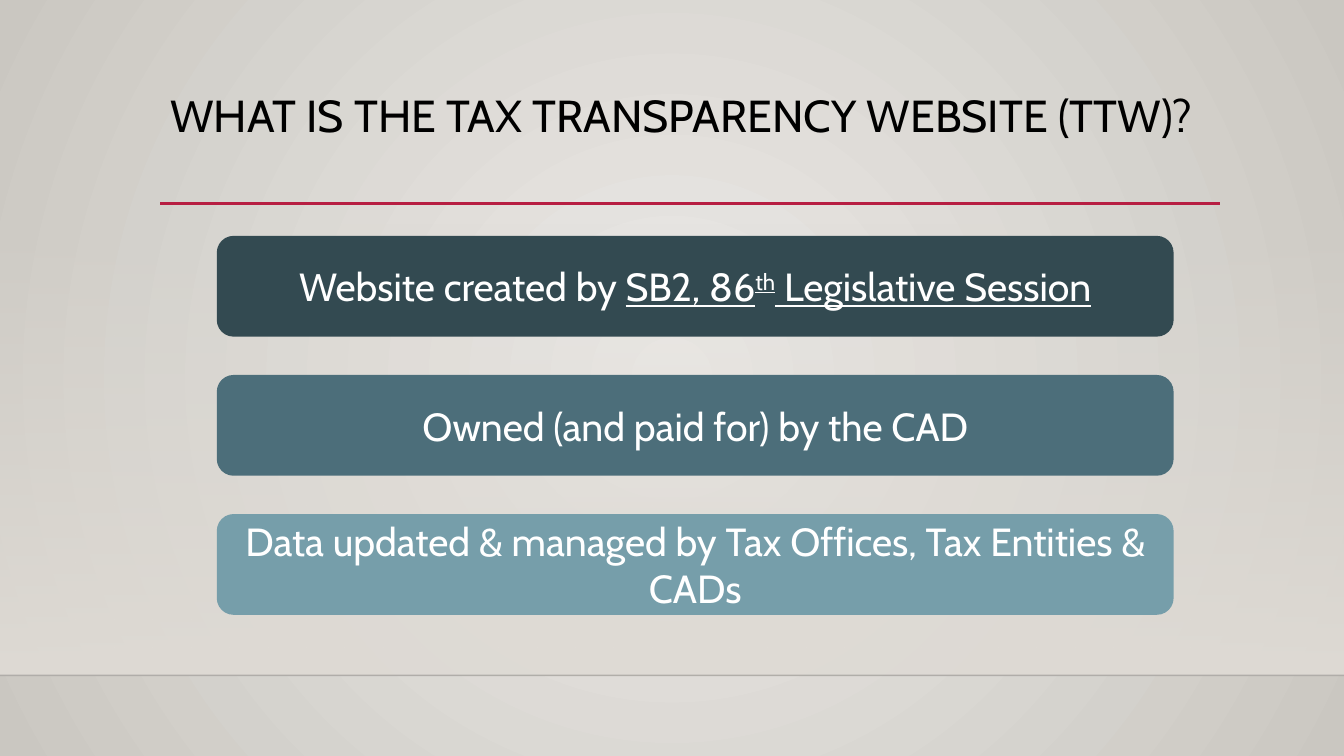
from lxml import etree
from pptx import Presentation
from pptx.dml.color import RGBColor
from pptx.enum import shapes, text
from pptx.oxml import parse_xml
from pptx.oxml.ns import nsdecls, qn
from pptx.util import Inches, Pt

COLORS = {
    "center": "ECEAE7", "edge": "CAC7C1", "wall": "DFDBD5",
    "floor": "000001", "rule": "B71E42", "title": "000000", "white": "FFFFFF",
    "dark": "334A51", "medium": "4C6E7A", "light": "769EAA",
}
FONT = "Cabin"


def set_gradient(fill, element, stops, direction):
    """Fill with (color, opacity) stops, first to last, along a direction element."""
    fill.gradient()
    stop_xml = "".join(
        f'<a:gs pos="{index * 100000}"><a:srgbClr val="{COLORS[color]}">'
        f'<a:alpha val="{opacity * 1000}"/></a:srgbClr></a:gs>'
        for index, (color, opacity) in enumerate(stops))
    gradient = parse_xml(f'<a:gradFill {nsdecls("a")} rotWithShape="1">'
                         f'<a:gsLst>{stop_xml}</a:gsLst>{direction}</a:gradFill>')
    previous = element.find(".//" + qn("a:gradFill"))
    previous.getparent().replace(previous, gradient)


def add_run(paragraph, words, size, color, underline=None, baseline=None):
    run = paragraph.add_run()
    run.text = words
    font_format = {"name": FONT, "size": Pt(size), "underline": underline}
    for name, value in font_format.items():
        setattr(run.font, name, value)
    run.font.color.rgb = RGBColor.from_string(COLORS[color])
    if baseline:
        run.font._element.set("baseline", str(baseline * 1000))


presentation = Presentation()
presentation.slide_width = Inches(13.33)
presentation.slide_height = Inches(7.5)
slide = presentation.slides.add_slide(presentation.slide_layouts[5])

# Background and lower wall
set_gradient(slide.background.fill, slide.element, [("center", 100), ("edge", 100)],
             '<a:path path="circle"><a:fillToRect l="50000" t="50000" r="50000" b="50000"/></a:path>')
wall = slide.shapes.add_shape(shapes.MSO_SHAPE.RECTANGLE, Inches(0), Inches(2.21),
                              Inches(13.33), Inches(4.49))
wall.shadow.inherit = False
wall.line.fill.background()
set_gradient(wall.fill, wall.element, [("wall", 0), ("wall", 100)],
             '<a:lin ang="5400000" scaled="0"/>')

# Floor line and title rule
for left, right, y, color, width, opacity in [
    (0, 13.33, 6.7, "floor", 1, 20),
    (1.59, 12.1, 2.02, "rule", 2.5, 100),
]:
    line = slide.shapes.add_connector(shapes.MSO_CONNECTOR.STRAIGHT, Inches(left), Inches(y),
                                      Inches(right), Inches(y))
    line.line.width = Pt(width)
    line.line.color.rgb = RGBColor.from_string(COLORS[color])
    line_color = line.element.find(".//" + qn("a:ln")).find(".//" + qn("a:srgbClr"))
    etree.SubElement(line_color, qn("a:alpha")).set("val", str(opacity * 1000))
    etree.SubElement(line.element.spPr, qn("a:effectLst"))

# Title, in front of the wall
title = slide.shapes.title
title.element.getparent().append(title.element)
title.left, title.top, title.width, title.height = map(Inches, (1.59, 0.88, 10.5, 1.15))
title_frame = title.text_frame
title_frame.word_wrap = True
title_frame.auto_size = text.MSO_AUTO_SIZE.NONE
title_frame.vertical_anchor = text.MSO_ANCHOR.TOP
paragraph = title_frame.paragraphs[0]
paragraph.alignment = text.PP_ALIGN.LEFT
paragraph.line_spacing = 0.9
add_run(paragraph, "WHAT IS THE TAX TRANSPARENCY WEBSITE (TTW)?", 32, "title")

# Fact bars: each run is (words, underline, baseline percent)
facts = [
    ("dark", [("Website created by ", None, None), ("SB2, 86", True, None),
              ("th", True, 30), (" Legislative Session", True, None)]),
    ("medium", [("Owned (and paid for) by the CAD", None, None)]),
    ("light", [("Data updated & managed by Tax Offices, Tax Entities & CADs", None, None)]),
]
for index, (color, runs) in enumerate(facts):
    bar = slide.shapes.add_shape(shapes.MSO_SHAPE.ROUNDED_RECTANGLE, Inches(2.15),
                                 Inches(2.34 + index * 1.38), Inches(9.49), Inches(1))
    bar.shadow.inherit = False
    bar.fill.solid()
    bar.fill.fore_color.rgb = RGBColor.from_string(COLORS[color])
    bar.line.fill.background()
    bar.text_frame.word_wrap = True
    bar.text_frame.vertical_anchor = text.MSO_ANCHOR.MIDDLE
    paragraph = bar.text_frame.paragraphs[0]
    paragraph.alignment = text.PP_ALIGN.CENTER
    for words, underline, baseline in runs:
        add_run(paragraph, words, 28, "white", underline, baseline)

presentation.save("out.pptx")
